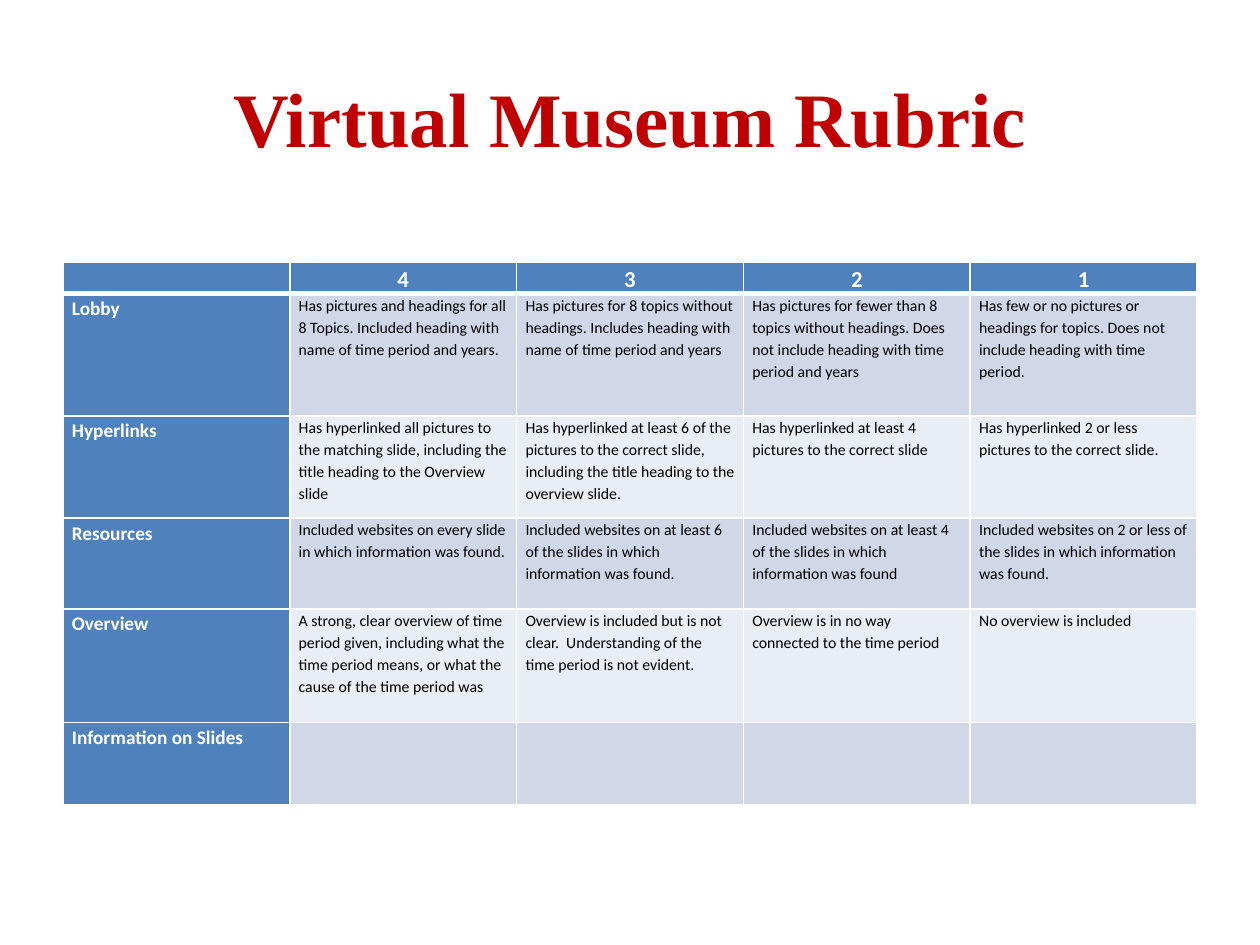
from lxml import etree
from pptx import Presentation
from pptx import util as u
from pptx.dml.color import RGBColor
from pptx.enum import text
from pptx.oxml import ns

COLORS = {
    "title": "C00000",
    "header": "4F81BD",
    "odd": "D0D8E8",
    "even": "E9EDF4",
    "light": "FFFFFF",
    "dark": "000000",
}
RUBRIC = [
    ["", "4", "3", "2", "1"],
    [
        "Lobby",
        "Has pictures and headings for all 8 Topics. Included heading with name of time period and years.",
        "Has pictures for 8 topics without headings. Includes heading with name of time period and years",
        "Has pictures for fewer than 8 topics without headings. Does not include heading with time period and years",
        "Has few or no pictures or headings for topics. Does not include heading with time period.",
    ],
    [
        "Hyperlinks",
        "Has hyperlinked all pictures to the matching slide, including the title heading to the Overview slide",
        "Has hyperlinked at least 6 of the pictures to the correct slide, including the title heading to the overview slide.",
        "Has hyperlinked at least 4 pictures to the correct slide",
        "Has hyperlinked 2 or less pictures to the correct slide.",
    ],
    [
        "Resources",
        "Included websites on every slide in which information was found.",
        "Included websites on at least 6 of the slides in which information was found.",
        "Included websites on at least 4 of the slides in which information was found",
        "Included websites on 2 or less of the slides in which information was found.",
    ],
    [
        "Overview",
        "A strong, clear overview of time period given, including what the time period means, or what the cause of the time period was",
        "Overview is included but is not clear.  Understanding of the time period is not evident.",
        "Overview is in no way connected to the time period",
        "No overview is included",
    ],
    ["Information on Slides", "", "", "", ""],
]
ROW_HEIGHTS = [0.64, 2.46, 2.06, 1.83, 2.29, 1.65]


def style_span(span, size, color, bold, font="Calibri"):
    span.font.name = font
    span.font.size = u.Pt(size)
    span.font.bold = bold
    span.font.color.rgb = RGBColor.from_string(COLORS[color])


def add_border(cell, side, width):
    properties = cell._tc.get_or_add_tcPr()
    line = etree.SubElement(properties, ns.qn(f"a:ln{side}"), w=str(u.Pt(width)))
    fill = etree.SubElement(line, ns.qn("a:solidFill"))
    etree.SubElement(fill, ns.qn("a:srgbClr"), val=COLORS["light"])


deck = Presentation()
deck.slide_width, deck.slide_height = u.Cm(25.4), u.Cm(19.05)
page = deck.slides.add_slide(deck.slide_layouts[5])

title = page.shapes.title
title.left, title.top = u.Cm(1.27), u.Cm(0.76)
title.width, title.height = u.Cm(22.86), u.Cm(3.18)
title.text_frame.text = "Virtual Museum Rubric"
title.text_frame.vertical_anchor = text.MSO_ANCHOR.MIDDLE
para = title.text_frame.paragraphs[0]
para.alignment = text.PP_ALIGN.CENTER
style_span(para.runs[0], 44, "title", True, "Times New Roman")

frame = page.shapes.add_table(
    len(RUBRIC), len(RUBRIC[0]), u.Cm(1.27), u.Cm(5.28), u.Cm(22.86), u.Cm(sum(ROW_HEIGHTS))
)
table = frame.table
for row, height in zip(table.rows, ROW_HEIGHTS):
    row.height = u.Cm(height)

for r, entries in enumerate(RUBRIC):
    for c, entry in enumerate(entries):
        cell = table.cell(r, c)
        is_header = r == 0 or c == 0
        size = 13 if r == 0 else 11 if c == 0 else 9
        cell.margin_left = cell.margin_right = u.Cm(0.18)
        cell.margin_top = cell.margin_bottom = 0
        for side in "LRTB":
            under_header = (r, side) in [(0, "B"), (1, "T")]
            add_border(cell, side, 3 if under_header else 1)
        cell.fill.solid()
        band = "header" if is_header else "odd" if r % 2 else "even"
        cell.fill.fore_color.rgb = RGBColor.from_string(COLORS[band])
        cell.text_frame.text = entry
        para = cell.text_frame.paragraphs[0]
        para.line_spacing = 1.15
        para.alignment = text.PP_ALIGN.CENTER if r == 0 else text.PP_ALIGN.LEFT
        for span in para.runs:
            style_span(span, size, "light" if is_header else "dark", is_header)
        if not entry:
            etree.SubElement(para._p, ns.qn("a:endParaRPr"), sz=str(size * 100))

deck.save("out.pptx")
